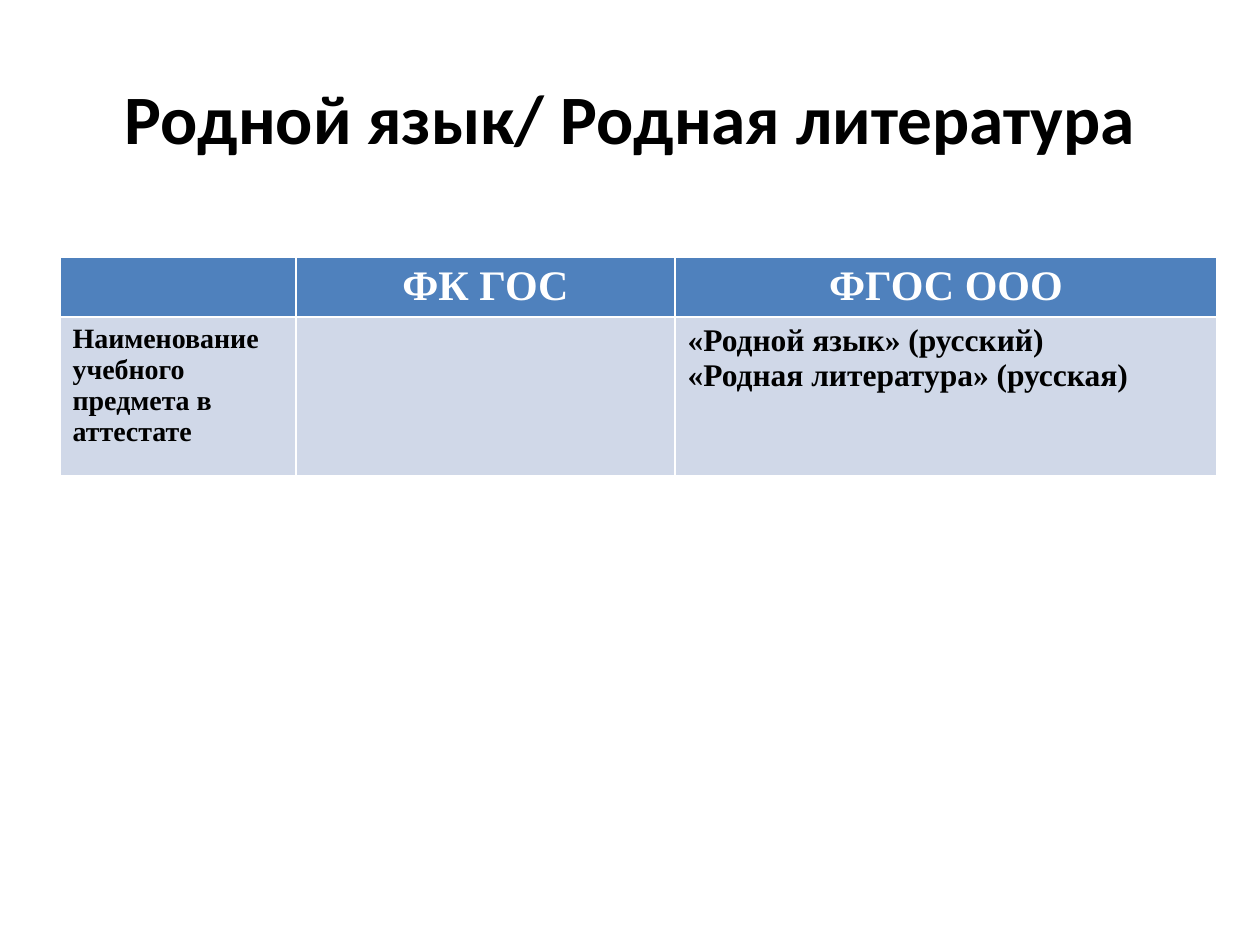
import pptx
import pptx.util
import pptx.dml.color
import pptx.enum.text

PX = 914400 // 126
ALIGN = pptx.enum.text.PP_ALIGN

TITLE = "Родной язык/ Родная литература"
TITLE_BOX = (63, 38, 1134, 157)

TABLE_LEFT, TABLE_TOP = 60, 257
COLUMN_WIDTHS = [236, 379, 542]
ROW_HEIGHTS = [60, 159]
ROWS = [
    ["", "ФК ГОС", "ФГОС ООО"],
    ["Наименование учебного предмета в аттестате", "",
     "«Родной язык» (русский)\n«Родная литература» (русская)"],
]
# fill, text colour, alignment, text size in each column
ROW_STYLES = [
    ("4F81BD", "FFFFFF", ALIGN.CENTER, [24, 24, 24]),
    ("D0D8E8", "000000", ALIGN.LEFT, [16, 18, 18]),
]


def px(*lengths):
    return [pptx.util.Emu(n * PX) for n in lengths]


def rgb(value):
    return pptx.dml.color.RGBColor.from_string(value)


def format_text(tf, font, size, color, align):
    for p in tf.paragraphs:
        p.alignment = align
        for r in p.runs:
            r.font.name = font
            r.font.size = pptx.util.Pt(size)
            r.font.bold = True
            r.font.color.rgb = rgb(color)


def add_title(s):
    title = s.shapes.title
    title.left, title.top, title.width, title.height = px(*TITLE_BOX)
    tf = title.text_frame
    tf.text = TITLE
    tf.word_wrap = True
    tf.vertical_anchor = pptx.enum.text.MSO_ANCHOR.MIDDLE
    format_text(tf, "Calibri", 39.6, "000000", ALIGN.CENTER)


def add_subject_table(s):
    box = px(TABLE_LEFT, TABLE_TOP, sum(COLUMN_WIDTHS), sum(ROW_HEIGHTS))
    table = s.shapes.add_table(len(ROWS), len(COLUMN_WIDTHS), *box).table
    for column, width in zip(table.columns, px(*COLUMN_WIDTHS)):
        column.width = width
    for row, height in zip(table.rows, px(*ROW_HEIGHTS)):
        row.height = height
    for row, texts, (fill, color, align, sizes) in zip(table.rows, ROWS, ROW_STYLES):
        for cell, text, size in zip(row.cells, texts, sizes):
            cell.fill.solid()
            cell.fill.fore_color.rgb = rgb(fill)
            cell.text_frame.text = text
            format_text(cell.text_frame, "Times New Roman", size, color, align)


def main():
    prs = pptx.Presentation()
    prs.slide_width, prs.slide_height = px(1260, 945)
    s = prs.slides.add_slide(prs.slide_layouts[5])
    add_title(s)
    add_subject_table(s)
    prs.save("out.pptx")


if __name__ == "__main__":
    main()
